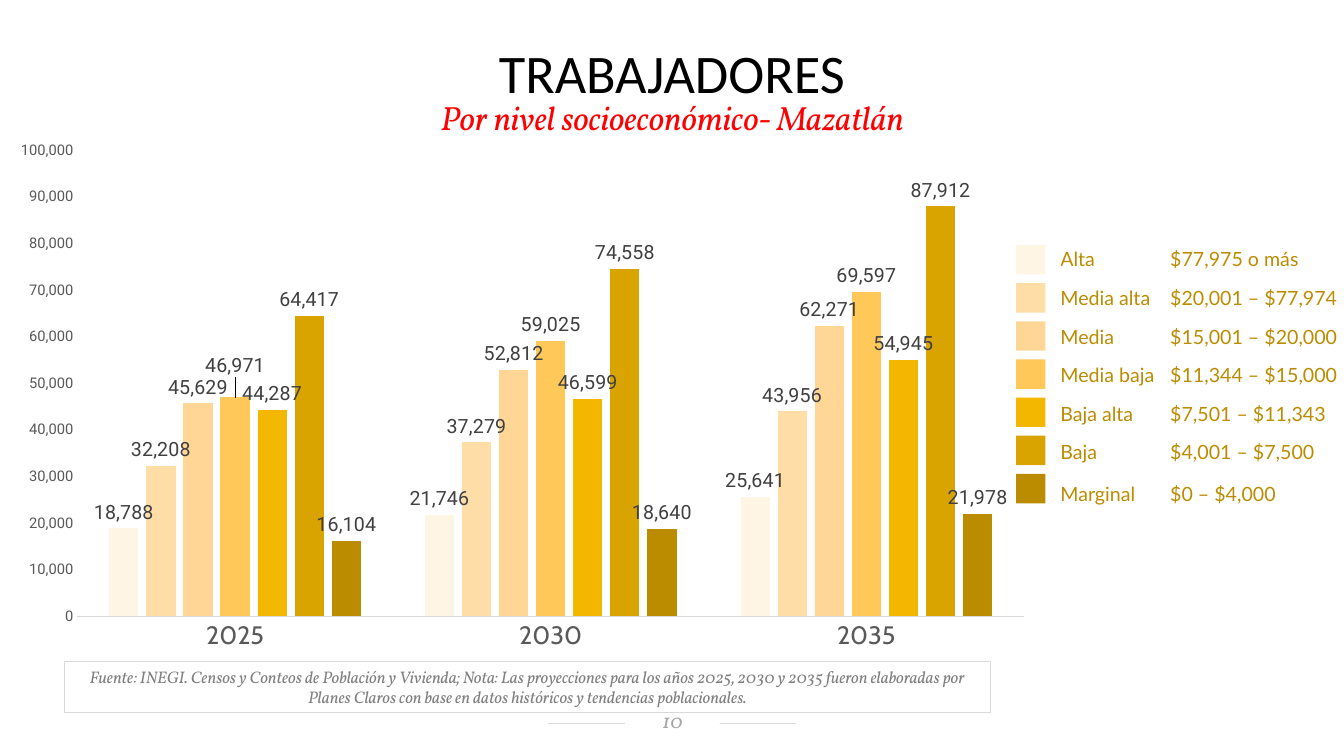
from lxml.etree import SubElement
from pptx import Presentation
from pptx.chart.data import CategoryChartData
from pptx.dml.color import RGBColor
from pptx.enum.chart import XL_CHART_TYPE, XL_LABEL_POSITION, XL_TICK_MARK
from pptx.enum.shapes import MSO_CONNECTOR, MSO_SHAPE
from pptx.enum.text import MSO_ANCHOR, PP_ALIGN
from pptx.oxml.ns import qn
from pptx.util import Pt

YEARS = ["2025", "2030", "2035"]
# Level, income range, colour, workers per year
LEVELS = [
    ("Alta", "$77,975 o más", "FFF5E5", (18788, 21746, 25641)),
    ("Media alta", "$20,001 – $77,974", "FFDDA7", (32208, 37279, 43956)),
    ("Media", "$15,001 – $20,000", "FFD695", (45629, 52812, 62271)),
    ("Media baja", "$11,344 – $15,000", "FFC859", (46971, 59025, 69597)),
    ("Baja alta", "$7,501 – $11,343", "F3B700", (44287, 46599, 54945)),
    ("Baja", "$4,001 – $7,500", "DAA400", (64417, 74558, 87912)),
    ("Marginal", "$0 – $4,000", "BC8C00", (16104, 18640, 21978)),
]
SOURCE_NOTE = (
    "Fuente: INEGI. Censos y Conteos de Población y Vivienda; Nota: Las proyecciones "
    "para los años 2025, 2030 y 2035 fueron elaboradas por Planes Claros con base en "
    "datos históricos y tendencias poblacionales."
)
NUMBER_FORMAT = "#,##0"
PALE_GREY = "D9D9D9"


def rgb(color):
    return RGBColor.from_string(color)


def set_font(font, name, size, color, italic=False):
    font.name = name
    font.size = Pt(size)
    font.color.rgb = rgb(color)
    font.italic = italic


def set_text(shape, text, font, margins, anchor=MSO_ANCHOR.TOP):
    """Write one centred paragraph; margins are left, top, right, bottom."""
    frame = shape.text_frame
    frame.word_wrap = True
    frame.vertical_anchor = anchor
    frame.margin_left, frame.margin_top, frame.margin_right, frame.margin_bottom = map(Pt, margins)
    paragraph = frame.paragraphs[0]
    paragraph.text = text
    paragraph.alignment = PP_ALIGN.CENTER
    set_font(paragraph.font, *font)
    return paragraph


def add_text(slide, box, text, font, margins=(7.2, 3.6, 7.2, 3.6)):
    return set_text(slide.shapes.add_textbox(*map(Pt, box)), text, font, margins)


def add_rectangle(slide, box, fill=None, line=None):
    shape = slide.shapes.add_shape(MSO_SHAPE.RECTANGLE, *map(Pt, box))
    shape.shadow.inherit = False
    if fill:
        shape.fill.solid()
        shape.fill.fore_color.rgb = rgb(fill)
    else:
        shape.fill.background()
    if line:
        shape.line.color.rgb = rgb(line)
        shape.line.width = Pt(0.75)
    else:
        shape.line.fill.background()
    return shape


def add_page_number(slide, number):
    line = slide.shapes.add_connector(MSO_CONNECTOR.STRAIGHT, Pt(391.7), Pt(517), Pt(568.8), Pt(517))
    line.line.color.rgb = rgb(PALE_GREY)
    line.line.width = Pt(1)
    SubElement(line._element.spPr, qn("a:effectLst"))
    plate = add_rectangle(slide, (446.4, 506.9, 67.7, 18), fill="FFFFFF")
    set_text(plate, number, ("Vollkorn", 14.7, "A6A6A6", True), (7.2, 1.4, 6.5, 3.6), MSO_ANCHOR.MIDDLE)


def add_manual_layout(parent, index, **values):
    """Insert a c:layout at the given child index, replacing any present one."""
    for old in parent.findall(qn("c:layout")):
        parent.remove(old)
    layout = SubElement(parent, qn("c:layout"))
    manual = SubElement(layout, qn("c:manualLayout"))
    for name, value in values.items():
        SubElement(manual, qn(f"c:{name}")).set("val", str(value))
    parent.insert(index, layout)


def style_axes(chart):
    years = chart.category_axis
    years.major_tick_mark = XL_TICK_MARK.NONE
    years.format.line.color.rgb = rgb(PALE_GREY)
    years.format.line.width = Pt(0.75)
    set_font(years.tick_labels.font, "Cabin", 18, "595959")

    workers = chart.value_axis
    workers.minimum_scale, workers.maximum_scale, workers.major_unit = 0, 100000, 10000
    workers.has_major_gridlines = False
    workers.major_tick_mark = XL_TICK_MARK.NONE
    workers.format.line.fill.background()
    workers.tick_labels.number_format = NUMBER_FORMAT
    workers.tick_labels.number_format_is_linked = False
    set_font(workers.tick_labels.font, "Roboto", 10.5, "595959")


def style_series(series, color):
    series.format.fill.solid()
    series.format.fill.fore_color.rgb = rgb(color)
    series.invert_if_negative = False
    labels = series.data_labels
    labels.show_value = True
    labels.number_format = NUMBER_FORMAT
    labels.number_format_is_linked = False
    labels.position = XL_LABEL_POSITION.OUTSIDE_END
    set_font(labels.font, "Roboto", 14, "404040")


def raise_label(series, point_index, offset):
    """Lift one data label by a fraction of the chart height."""
    label = series.points[point_index].data_label
    set_font(label.font, "Roboto", 14, "404040")
    label.position = XL_LABEL_POSITION.OUTSIDE_END
    element = series.data_labels._element.find(qn("c:dLbl"))
    add_manual_layout(element, 1, x=0, y=-offset)


def add_workers_chart(slide):
    data = CategoryChartData(number_format=NUMBER_FORMAT)
    data.categories = YEARS
    for level, _, _, workers in LEVELS:
        data.add_series(level, workers)
    chart = slide.shapes.add_chart(
        XL_CHART_TYPE.COLUMN_CLUSTERED, Pt(0), Pt(93.6), Pt(746.6), Pt(378.7), data
    ).chart
    chart.has_legend = False
    chart.has_title = False
    set_font(chart.font, "Cabin", 10, "000000")
    style_axes(chart)

    plot = chart.plots[0]
    plot.vary_by_categories = False
    plot.gap_width = 219
    plot.overlap = -27
    for series, (_, _, color, _) in zip(plot.series, LEVELS):
        style_series(series, color)
    raise_label(plot.series[3], 0, 0.03)
    add_manual_layout(
        chart._chartSpace.chart.plotArea, 0, layoutTarget="inner",
        xMode="edge", yMode="edge", x=0.074, y=0.036, w=0.906, h=0.879,
    )


def add_income_table(slide):
    table = slide.shapes.add_table(len(LEVELS), 2, Pt(757.4), Pt(171.4), Pt(245.5), Pt(197.3)).table
    table.first_row = table.horz_banding = False
    table.columns[0].width, table.columns[1].width = Pt(78.5), Pt(167)
    for row, (level, income, _, _) in zip(table.rows, LEVELS):
        row.height = Pt(31.7 if level == "Marginal" else 27.6)
        for cell, text in zip(row.cells, (level, income)):
            cell.fill.background()
            cell.vertical_anchor = MSO_ANCHOR.MIDDLE
            cell.margin_left = cell.margin_right = cell.margin_top = cell.margin_bottom = 0
            paragraph = cell.text_frame.paragraphs[0]
            paragraph.text = text
            set_font(paragraph.font, "Lato", 14, "BC8C00")


def add_swatches(slide):
    for index, (_, _, color, _) in enumerate(LEVELS):
        add_rectangle(slide, (725.8, 175 + 27.25 * index, 21, 21), fill=color)


def main():
    presentation = Presentation()
    presentation.slide_width, presentation.slide_height = Pt(960), Pt(540)
    slide = presentation.slides.add_slide(presentation.slide_layouts[6])

    add_page_number(slide, "10")
    note = add_rectangle(slide, (46.1, 472.3, 661.7, 36.4), line=PALE_GREY)
    set_text(note, SOURCE_NOTE, ("Vollkorn", 12, "808080", True), (7.2, 3.6, 7.2, 3.6), MSO_ANCHOR.MIDDLE)
    title = add_text(slide, (33.8, 36.7, 892.1, 41), "TRABAJADORES",
                     ("Calibri", 38.8, "000000"), (7.9, 4.3, 7.9, 4.3))
    title.line_spacing = 0.7
    add_text(slide, (-23.8, 65.5, 1008, 36), "Por nivel socioeconómico- Mazatlán",
             ("Vollkorn", 24, "FF0000", True))
    add_workers_chart(slide)
    add_income_table(slide)
    add_swatches(slide)
    presentation.save("out.pptx")


if __name__ == "__main__":
    main()
